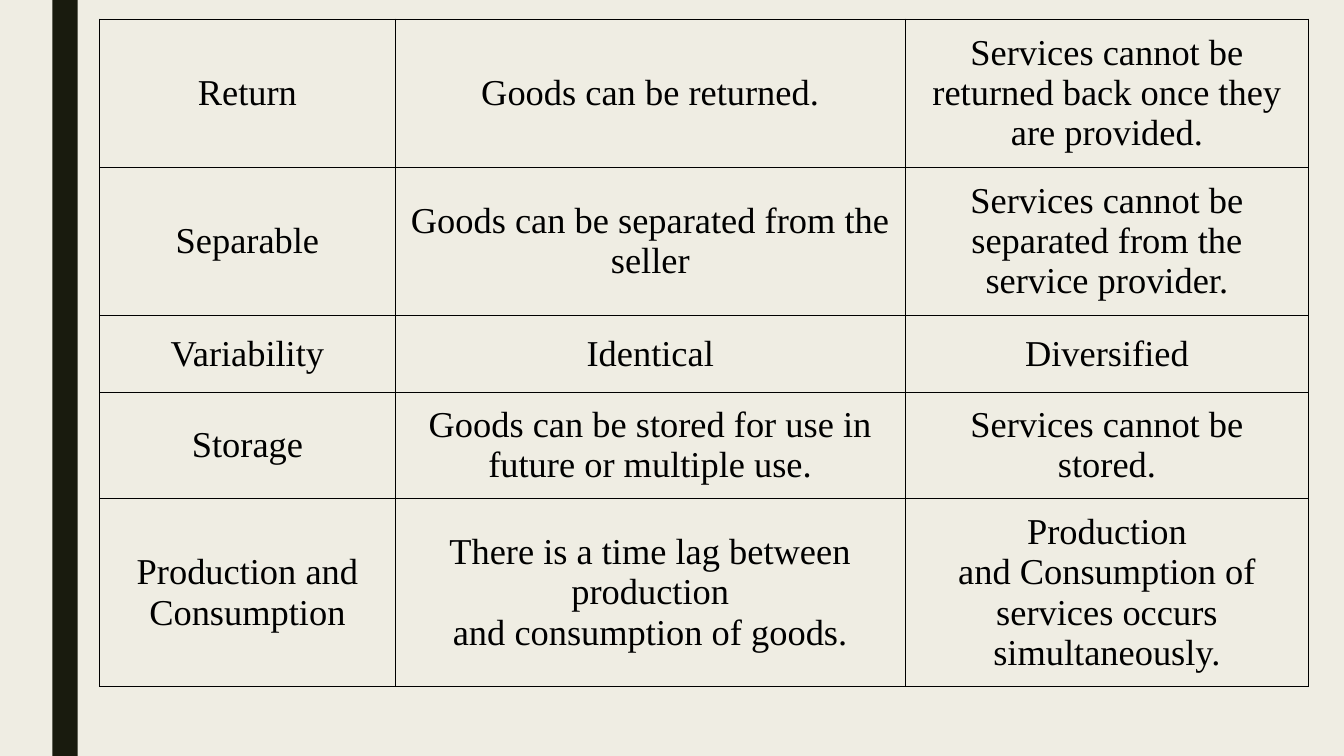
from lxml import etree
from pptx import Presentation
from pptx.dml.color import RGBColor
from pptx.enum.shapes import MSO_SHAPE
from pptx.enum.text import MSO_ANCHOR, PP_ALIGN
from pptx.oxml.ns import qn
from pptx.util import Inches, Pt

BACKGROUND = RGBColor(0xEF, 0xED, 0xE3)
BAR = RGBColor(0x19, 0x1B, 0x0E)
BLACK = RGBColor(0, 0, 0)
FONT = "Times New Roman"

COL_WIDTHS = [2.93, 5.06, 4]
ROW_HEIGHTS = [1.47, 1.47, 0.76, 1.06, 1.86]
CELL_MARGIN = Inches(0.13)

# Feature, goods, services; a line break starts a new paragraph
ROWS = [
    ("Return", "Goods can be returned.",
     "Services cannot be returned back once they are provided."),
    ("Separable", "Goods can be separated from the seller",
     "Services cannot be separated from the service provider."),
    ("Variability", "Identical", "Diversified"),
    ("Storage", "Goods can be stored for use in future or multiple use.",
     "Services cannot be stored."),
    ("Production and Consumption",
     "There is a time lag between production\nand consumption of goods.",
     "Production\nand Consumption of services occurs simultaneously."),
]


def add_bar(s):
    bar = s.shapes.add_shape(MSO_SHAPE.RECTANGLE, Inches(0.52), 0,
                             Inches(0.25), Inches(7.5))
    bar.shadow.inherit = False
    bar.fill.solid()
    bar.fill.fore_color.rgb = BAR
    bar.line.fill.background()


def add_borders(cell):
    tc_pr = cell._tc.get_or_add_tcPr()
    for side in ("a:lnL", "a:lnR", "a:lnT", "a:lnB"):
        ln = etree.SubElement(tc_pr, qn(side), w=str(Pt(0.75)))
        fill = etree.SubElement(ln, qn("a:solidFill"))
        etree.SubElement(fill, qn("a:srgbClr"), val=str(BLACK))


def fill_cell(cell, text):
    add_borders(cell)
    cell.fill.background()
    cell.vertical_anchor = MSO_ANCHOR.MIDDLE
    cell.margin_left = cell.margin_right = CELL_MARGIN
    cell.margin_top = cell.margin_bottom = CELL_MARGIN
    cell.text = text
    for p in cell.text_frame.paragraphs:
        p.alignment = PP_ALIGN.CENTER
        p.font.name = FONT
        p.font.size = Pt(26)
        p.font.color.rgb = BLACK


def add_comparison_table(s):
    table = s.shapes.add_table(
        len(ROWS), len(COL_WIDTHS), Inches(0.99), Inches(0.19),
        Inches(sum(COL_WIDTHS)), Inches(sum(ROW_HEIGHTS))).table
    table.first_row = False
    table.horz_banding = False
    for column, width in zip(table.columns, COL_WIDTHS):
        column.width = Inches(width)
    for row, height, texts in zip(table.rows, ROW_HEIGHTS, ROWS):
        row.height = Inches(height)
        for cell, text in zip(row.cells, texts):
            fill_cell(cell, text)


def main():
    prs = Presentation()
    prs.slide_width = Inches(13.33)
    prs.slide_height = Inches(7.5)

    # Blank slide with a plain background
    s = prs.slides.add_slide(prs.slide_layouts[6])
    s.background.fill.solid()
    s.background.fill.fore_color.rgb = BACKGROUND

    add_bar(s)
    add_comparison_table(s)
    prs.save("out.pptx")


if __name__ == "__main__":
    main()
